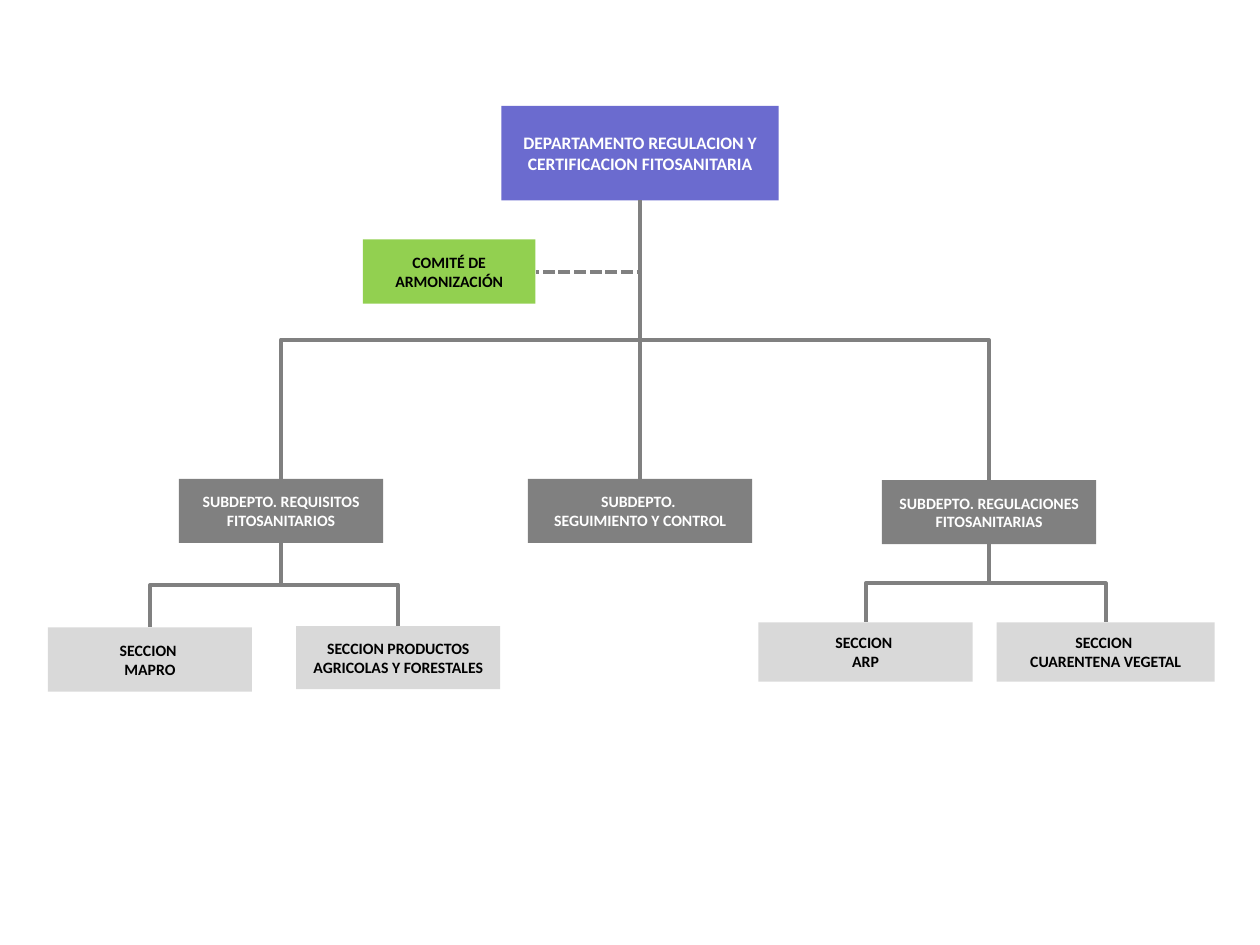
import pptx
import pptx.dml.color
import pptx.enum.dml
import pptx.enum.shapes
import pptx.enum.text
import pptx.oxml.ns
import pptx.util
from lxml import etree
from pptx.util import Inches

COLORS = {
    "department": "6B6BCF",
    "subdepartment": "808080",
    "section": "D9D9D9",
    "committee": "92D050",
    "line": "808080",
    "light": "FFFFFF",
    "dark": "000000",
}
TOP, LEFT, BOTTOM, RIGHT = range(4)


def rgb(name):
    return pptx.dml.color.RGBColor.from_string(COLORS[name])


def add_box(s, box, kind, lines, ink="dark", size=9):
    sp = s.shapes.add_shape(pptx.enum.shapes.MSO_SHAPE.RECTANGLE,
                            *(Inches(v) for v in box))
    sp.shadow.inherit = False
    sp.fill.solid()
    sp.fill.fore_color.rgb = rgb(kind)
    sp.line.fill.background()
    tf = sp.text_frame
    tf.word_wrap = True
    tf.vertical_anchor = pptx.enum.text.MSO_ANCHOR.MIDDLE
    for i, line in enumerate(lines):
        p = tf.add_paragraph() if i else tf.paragraphs[0]
        p.alignment = pptx.enum.text.PP_ALIGN.CENTER
        r = p.add_run()
        r.text = line
        r.font.name = "Calibri"
        r.font.size = pptx.util.Pt(size)
        r.font.bold = True
        r.font.color.rgb = rgb(ink)
    return sp


def link(s, parent, child, side=TOP):
    """Join the parent's bottom to a side of the child, leaving downwards."""
    x1 = parent.left + parent.width // 2
    y1 = parent.top + parent.height
    if side == TOP:
        x2, y2 = child.left + child.width // 2, child.top
    else:
        x2, y2 = child.left + child.width, child.top + child.height // 2
    kinds = pptx.enum.shapes.MSO_CONNECTOR
    straight = abs(x2 - x1) < Inches(0.02)
    c = s.shapes.add_connector(kinds.STRAIGHT if straight else kinds.ELBOW,
                               x1, y1, x2, y2)
    c.begin_connect(parent, BOTTOM)
    c.end_connect(child, side)
    c.line.color.rgb = rgb("line")
    c.line.width = pptx.util.Pt(2.25)
    spPr = c._element.spPr
    etree.SubElement(spPr, pptx.oxml.ns.qn("a:effectLst"))
    if not straight:
        # An elbow starts sideways, so its frame is turned a quarter.
        dx, dy = abs(x2 - x1), y2 - y1
        c.left, c.top = (x1 + x2 - dy) // 2, (y1 + y2 - dx) // 2
        c.width, c.height = dy, dx
        rightward = x2 > x1
        xfrm = spPr.find(pptx.oxml.ns.qn("a:xfrm"))
        xfrm.set("rot", str((270 if rightward else 90) * 60000))
        xfrm.set("flipH", "1" if rightward else "0")
        xfrm.set("flipV", "0")
    if side != TOP:
        spPr.find(pptx.oxml.ns.qn("a:prstGeom")).set("prst", "bentConnector2")
        c.line.dash_style = pptx.enum.dml.MSO_LINE.SQUARE_DOT
        spPr.find(".//" + pptx.oxml.ns.qn("a:prstDash")).set("val", "sysDash")
    return c


def add_head(s, box):
    """Department with its advisory committee below and to the left."""
    x, y, w, h = box
    department = add_box(
        s, box, "department",
        ["DEPARTAMENTO REGULACION Y CERTIFICACION FITOSANITARIA"], "light", 10)
    committee = add_box(s, (x - 1.1, y + 1.06, 1.37, 0.51), "committee",
                        ["COMITÉ DE ARMONIZACIÓN"])
    link(s, department, committee, RIGHT)
    return department


def add_branch(s, department, box, lines, sections=()):
    """Subdepartment in the box; sections are offset from its corner."""
    x, y, w, h = box
    subdepartment = add_box(s, box, "subdepartment", lines, "light")
    link(s, department, subdepartment)
    for (dx, dy, sw, sh), section_lines in sections:
        section = add_box(s, (x + dx, y + dy, sw, sh), "section", section_lines)
        link(s, subdepartment, section)


def main():
    prs = pptx.Presentation()
    prs.slide_width, prs.slide_height = Inches(10), Inches(7.5)
    s = prs.slides.add_slide(prs.slide_layouts[6])
    department = add_head(s, (3.98, 0.84, 2.2, 0.75))
    add_branch(s, department, (1.42, 3.8, 1.62, 0.51),
               ["SUBDEPTO. REQUISITOS FITOSANITARIOS"],
               [((-1.04, 1.18, 1.62, 0.51), ["SECCION ", "MAPRO"]),
                ((0.93, 1.17, 1.62, 0.5),
                 ["SECCION PRODUCTOS AGRICOLAS Y FORESTALES"])])
    add_branch(s, department, (4.19, 3.8, 1.78, 0.51),
               ["SUBDEPTO. ", "SEGUIMIENTO Y CONTROL"])
    add_branch(s, department, (7, 3.81, 1.7, 0.51),
               ["SUBDEPTO. REGULACIONES FITOSANITARIAS"],
               [((-0.98, 1.13, 1.7, 0.47), ["SECCION ", "ARP"]),
                ((0.91, 1.13, 1.73, 0.47), ["SECCION ", "CUARENTENA VEGETAL"])])
    prs.save("out.pptx")


if __name__ == "__main__":
    main()
